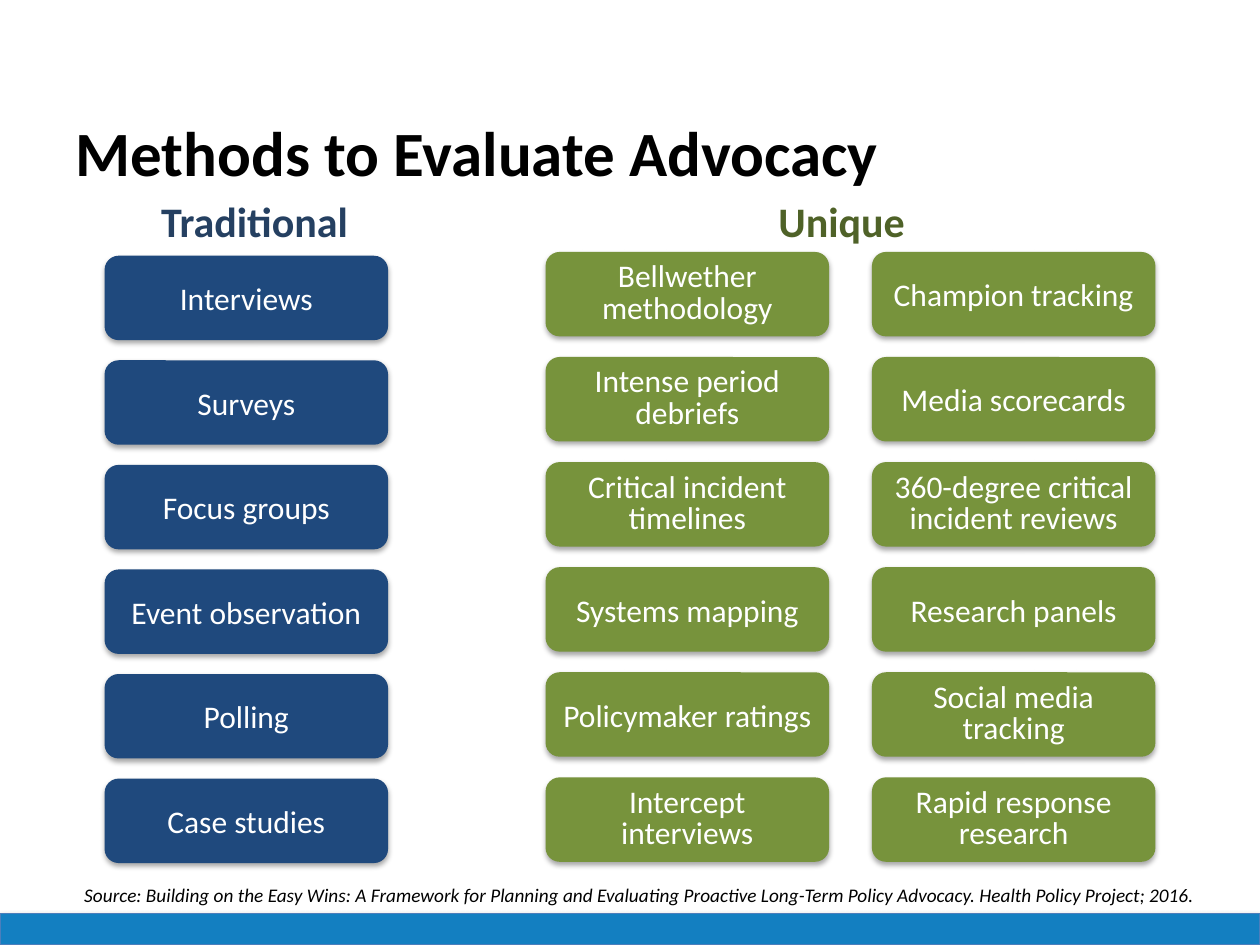
import pptx
import pptx.util
import pptx.dml.color
import pptx.enum.shapes
import pptx.enum.text
import pptx.oxml.ns
from lxml import etree

Inches = pptx.util.Inches
Pt = pptx.util.Pt

COLORS = {"black": "000000", "white": "FFFFFF", "bar": "137FC1", "bar_line": "4B7EBC",
          "navy": "1F497D", "navy_text": "254061", "green": "77933C", "green_text": "4F6228"}
FONT = "Calibri"
TITLE = "Methods to Evaluate Advocacy"
SOURCE = ("Source: Building on the Easy Wins: A Framework for Planning and Evaluating "
          "Proactive Long-Term Policy Advocacy. Health Policy Project; 2016.")
GROUPS = [
    {"heading": "Traditional", "heading_at": (1.18, 1.5, 1.7, 0.5),
     "heading_color": "navy_text", "fill": "navy", "top": 2.03, "pitch": 0.83,
     "columns": [(0.83, ["Interviews", "Surveys", "Focus groups", "Event observation",
                         "Polling", "Case studies"])]},
    {"heading": "Unique", "heading_at": (6.08, 1.5, 1.22, 0.5),
     "heading_color": "green_text", "fill": "green", "top": 2, "pitch": 0.834,
     "columns": [(4.33, ["Bellwether methodology", "Intense period debriefs",
                         "Critical incident timelines", "Systems mapping",
                         "Policymaker ratings", "Intercept interviews"]),
                 (6.92, ["Champion tracking", "Media scorecards",
                         "360-degree critical incident reviews", "Research panels",
                         "Social media tracking", "Rapid response research"])]},
]
CARD_WIDTH, CARD_HEIGHT = 2.25, 0.67
LONGEST_SINGLE_LINE = 19  # characters that fit on one line of a card


def rgb(name):
    return pptx.dml.color.RGBColor.from_string(COLORS[name])


def add_span(para, text, size, color, bold=False, italic=False):
    span = para.add_run()
    span.text = text
    span.font.name = FONT
    span.font.size = Pt(size)
    span.font.bold = bold
    span.font.italic = italic
    span.font.color.rgb = rgb(color)


def add_text(shapes, at, text, size, color, wrap, **style):
    frame = shapes.add_textbox(*map(Inches, at)).text_frame
    frame.word_wrap = wrap
    frame.auto_size = pptx.enum.text.MSO_AUTO_SIZE.SHAPE_TO_FIT_TEXT
    add_span(frame.paragraphs[0], text, size, color, **style)


def add_soft_shadow(shape):
    """Give the shape a faint shadow straight below it; call after setting its line."""
    qn = pptx.oxml.ns.qn
    shape.shadow.inherit = False
    effects = shape.element.spPr.find(qn("a:effectLst"))
    shadow = etree.SubElement(effects, qn("a:outerShdw"), blurRad=str(Pt(3.1)),
                              dist=str(Pt(1.8)), dir="5400000", rotWithShape="0")
    color = etree.SubElement(shadow, qn("a:srgbClr"), val=COLORS["black"])
    etree.SubElement(color, qn("a:alpha"), val="35000")


def add_filled(shapes, kind, at, fill):
    shape = shapes.add_shape(kind, *map(Inches, at))
    shape.fill.solid()
    shape.fill.fore_color.rgb = rgb(fill)
    shape.line.fill.background()
    add_soft_shadow(shape)
    return shape


def add_card(shapes, left, top, text, fill):
    kind = pptx.enum.shapes.MSO_SHAPE.FLOWCHART_ALTERNATE_PROCESS
    card = add_filled(shapes, kind, (left, top, CARD_WIDTH, CARD_HEIGHT), fill)
    frame = card.text_frame
    frame.word_wrap = True
    frame.vertical_anchor = pptx.enum.text.MSO_ANCHOR.MIDDLE
    para = frame.paragraphs[0]
    para.alignment = pptx.enum.text.PP_ALIGN.CENTER
    if len(text) > LONGEST_SINGLE_LINE:
        para.line_spacing = Pt(18)
    add_span(para, text, 18, "white")


def add_method_group(page, group):
    shapes = page.shapes.add_group_shape().shapes
    add_text(shapes, group["heading_at"], group["heading"], 24,
             group["heading_color"], wrap=False, bold=True)
    for left, methods in group["columns"]:
        for row, method in enumerate(methods):
            add_card(shapes, left, group["top"] + row * group["pitch"], method, group["fill"])


def main():
    deck = pptx.Presentation()
    deck.slide_width, deck.slide_height = Inches(10), Inches(7.5)
    page = deck.slides.add_slide(deck.slide_layouts[5])

    bar = add_filled(page.shapes, pptx.enum.shapes.MSO_SHAPE.RECTANGLE,
                     (0, 7.25, 10, 0.25), "bar")
    bar.line.color.rgb = rgb("bar_line")
    bar.line.width = Pt(0)

    title = page.shapes.title
    title.left, title.top, title.width, title.height = map(Inches, (0.5, 0.83, 9, 0.75))
    title.text_frame.vertical_anchor = pptx.enum.text.MSO_ANCHOR.MIDDLE
    para = title.text_frame.paragraphs[0]
    para.alignment = pptx.enum.text.PP_ALIGN.LEFT
    add_span(para, TITLE, 36, "black", bold=True)

    for group in GROUPS:
        add_method_group(page, group)
    add_text(page.shapes, (0.57, 6.96, 9.09, 0.29), SOURCE, 11, "black",
             wrap=True, italic=True)
    deck.save("out.pptx")


if __name__ == "__main__":
    main()
